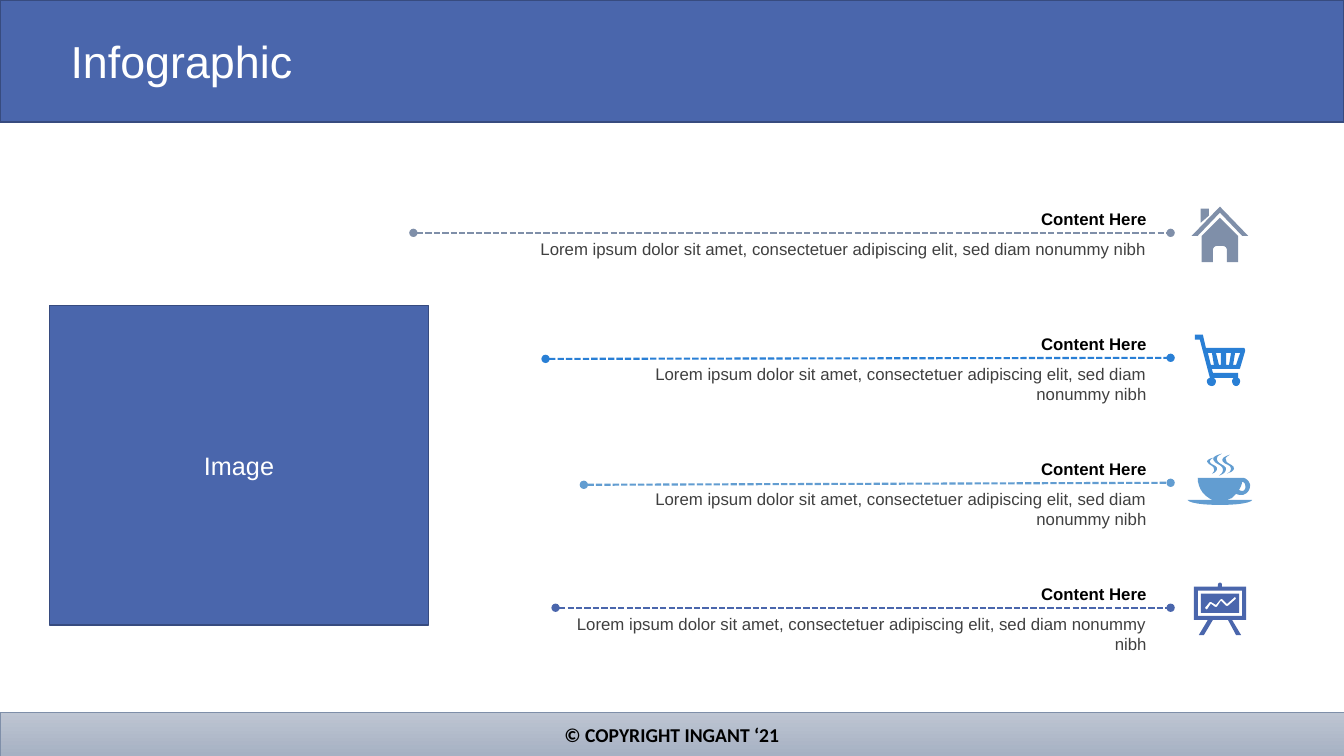
from lxml import etree
from pptx import Presentation
from pptx import util as u
from pptx.dml.color import RGBColor
from pptx.enum import dml, shapes, text
from pptx.oxml import ns

WIDTH, HEIGHT = u.Inches(13.33), u.Inches(7.5)
BLUE = RGBColor(0x4A, 0x66, 0xAC)
NAVY = RGBColor(0x37, 0x4B, 0x7F)
SLATE = RGBColor(0x7F, 0x8F, 0xA9)
AZURE = RGBColor(0x29, 0x7F, 0xD5)
SKY = RGBColor(0x62, 0x9D, 0xD1)
PALE = RGBColor(0xBE, 0xC5, 0xD2)
MIST = RGBColor(0xA6, 0xB1, 0xC3)
WHITE = RGBColor(0xFF, 0xFF, 0xFF)
BLACK = RGBColor(0, 0, 0)
GREY = RGBColor(0x40, 0x40, 0x40)

FIRST_RULE, ROW_STEP = 30.8, 16.53
TEXT_RIGHT, RULE_RIGHT = 86.05, 87.1
BOX_HEIGHT = 6.67
LOREM = "Lorem ipsum dolor sit amet, consectetuer adipiscing elit, sed diam nonummy nibh"

# Icon units are hundredths of an inch; six numbers make a Bézier curve.
HOUSE = [
    [(28, 11), (46, 29), (46, 55), (35, 55), (35, 43), (35, 41, 33, 39, 31, 39),
     (25, 39), (23, 39, 21, 41, 21, 43), (21, 55), (10, 55), (10, 29)],
    [(9, 2), (17, 2), (17, 9), (9, 16)],
    [(28, 0), (56, 29), (50, 29), (28, 6), (6, 29), (0, 29)],
]
CART = [
    [(40, 18), (38, 30), (41, 30), (45, 18)],
    [(31, 18), (31, 30), (34, 30), (36, 18)],
    [(21, 18), (24, 30), (26, 30), (26, 18)],
    [(13, 18), (16, 30), (19, 30), (17, 18)],
    [(8, 0), (11, 13), (48, 13), (49, 13, 50, 14, 50, 16), (45, 33),
     (45, 34, 44, 34, 43, 34), (17, 34), (18, 38), (43, 38), (43, 43),
     (44, 43, 45, 45, 45, 46), (45, 49, 43, 51, 41, 51), (39, 51, 37, 49, 37, 46),
     (37, 45, 38, 43, 39, 43), (19, 43), (20, 44, 21, 45, 21, 46),
     (21, 49, 19, 51, 17, 51), (14, 51, 12, 49, 12, 46), (12, 45, 13, 43, 15, 43),
     (5, 5), (0, 5), (0, 0)],
]
CUP = [
    [(54, 28), (54, 31, 52, 34, 51, 36), (52, 37, 54, 37, 55, 37),
     (57, 36, 58, 34, 57, 31), (57, 30, 56, 28, 54, 28)],
    [(54, 24), (58, 24, 61, 27, 62, 31), (62, 35, 60, 39, 57, 40),
     (54, 42, 51, 41, 48, 40), (47, 41, 45, 43, 44, 44), (42, 45, 41, 45, 39, 46),
     (64, 46), (63, 49, 49, 51, 32, 51), (15, 51, 1, 49, 0, 46), (25, 46),
     (23, 45, 22, 45, 21, 44), (14, 40, 10, 32, 10, 24)],
    [(26, 4), (24, 5, 22, 6, 22, 8), (23, 12, 30, 11, 29, 16), (28, 18, 27, 19, 24, 20),
     (26, 18, 27, 17, 26, 15), (26, 12, 22, 12, 20, 9), (18, 7, 21, 5, 26, 4)],
    [(42, 1), (39, 3, 37, 4, 38, 6), (38, 11, 46, 10, 46, 15), (45, 18, 43, 18, 39, 20),
     (42, 18, 43, 17, 43, 15), (43, 11, 37, 11, 35, 8), (33, 5, 36, 3, 42, 1)],
    [(34, 0), (31, 2, 29, 2, 29, 6), (30, 11, 39, 11, 38, 16), (37, 19, 36, 20, 31, 22),
     (34, 20, 35, 18, 35, 16), (35, 11, 28, 11, 26, 7), (24, 4, 27, 2, 34, 0)],
]
BOARD = [
    [(41, 14), (33, 21), (28, 16), (27, 16), (22, 22), (17, 19), (16, 19), (11, 25),
     (13, 27), (17, 21), (21, 24), (23, 24), (27, 18), (32, 23), (34, 23), (42, 16)],
    [(7, 11), (45, 11), (45, 30), (7, 30)],
    [(4, 8), (4, 33), (48, 33), (48, 8)],
    [(26, 0), (27, 0, 28, 1, 28, 2), (28, 4), (52, 4), (52, 37), (38, 37), (47, 52),
     (42, 52), (34, 37), (19, 37), (10, 52), (5, 52), (14, 37), (0, 37), (0, 4),
     (24, 4), (24, 2), (24, 1, 25, 0, 26, 0)],
]


def across(percent):
    return round(WIDTH * percent / 100)


def down(percent):
    return round(HEIGHT * percent / 100)


def area(left, top, width, height):
    return across(left), down(top), across(width), down(height)


def write(box, words, size, color, align, font="Arial", bold=False):
    frame = box.text_frame
    frame.word_wrap = True
    para = frame.paragraphs[0]
    para.text = words
    para.alignment = align
    para.font.name, para.font.size = font, u.Pt(size)
    para.font.bold, para.font.color.rgb = bold, color
    return para


def add_panel(page, place, line, weight):
    panel = page.shapes.add_shape(shapes.MSO_SHAPE.RECTANGLE, *place)
    panel.shadow.inherit = False
    panel.fill.solid()
    panel.fill.fore_color.rgb = BLUE
    panel.line.color.rgb = line
    panel.line.width = u.Pt(weight)
    panel.text_frame.vertical_anchor = text.MSO_ANCHOR.MIDDLE
    return panel


def add_title(page, words):
    title = page.shapes.title
    title.left, title.top, title.width, title.height = area(4.5, 3.2, 93.1, 10.53)
    title.text_frame.auto_size = text.MSO_AUTO_SIZE.NONE
    title.text_frame.vertical_anchor = text.MSO_ANCHOR.MIDDLE
    para = write(title, words, 32, WHITE, text.PP_ALIGN.LEFT)
    para.line_spacing = 0.9
    page.shapes._spTree.append(title._element)


def add_footer(page, words):
    footer = add_panel(page, area(0, 94.27, 100, 5.73), SLATE, 0.5)
    footer.fill.gradient()
    footer.fill.gradient_angle = 270
    for stop, color in zip(footer.fill.gradient_stops, (PALE, MIST)):
        stop.color.rgb = color
    write(footer, words, 14, BLACK, text.PP_ALIGN.CENTER, "Calibri", True)


def add_label(group, left, top, height, words, color, bold=False):
    box = group.shapes.add_textbox(*area(left, top, TEXT_RIGHT - left, height))
    write(box, words, 12, color, text.PP_ALIGN.RIGHT, bold=bold)
    box.text_frame.auto_size = text.MSO_AUTO_SIZE.SHAPE_TO_FIT_TEXT


def add_rule(group, left, start, end, color):
    rule = group.shapes.add_connector(
        shapes.MSO_CONNECTOR.STRAIGHT, across(left), down(start), across(RULE_RIGHT), down(end))
    rule.line.color.rgb = color
    rule.line.width = u.Pt(1.5)
    rule.line.dash_style = dml.MSO_LINE.SQUARE_DOT
    for tag in ("a:headEnd", "a:tailEnd"):
        etree.SubElement(rule.line._get_or_add_ln(), ns.qn(tag), type="oval")
    etree.SubElement(rule._element.spPr, ns.qn("a:effectLst"))


def trace(contour, steps=6):
    points = []
    for node in contour:
        if len(node) == 2:
            points.append((node[0] * 10, node[1] * 10))
            continue
        x, y = points[-1]
        bends = [(x, y)] + [(node[i] * 10, node[i + 1] * 10) for i in (0, 2, 4)]
        for step in range(1, steps + 1):
            t = step / steps
            weights = (1 - t) ** 3, 3 * t * (1 - t) ** 2, 3 * t * t * (1 - t), t ** 3
            points.append(tuple(sum(w * bend[axis] for w, bend in zip(weights, bends))
                                for axis in (0, 1)))
    return points


def add_icon(page, left, top, contours, color):
    outlines = [trace(contour) for contour in contours]
    builder = page.shapes.build_freeform(*outlines[0][0], scale=u.Inches(1) / 1000)
    for number, outline in enumerate(outlines):
        if number:
            builder.move_to(*outline[0])
        builder.add_line_segments(outline[1:], close=True)
    icon = builder.convert_to_shape(across(left), down(top))
    icon.shadow.inherit = False
    icon.fill.solid()
    icon.fill.fore_color.rgb = color
    icon.line.fill.background()


def main():
    deck = Presentation()
    deck.slide_width, deck.slide_height = WIDTH, HEIGHT
    page = deck.slides.add_slide(deck.slide_layouts[5])
    add_panel(page, area(0, 0, 100, 16.13), NAVY, 1)
    add_footer(page, "© COPYRIGHT INGANT ‘21")
    add_title(page, "Infographic")
    rows = [
        (SLATE, 31.88, 31.88, 4, 30.76, 0, HOUSE, 88.67, 27.33),
        (AZURE, 44.34, 44.34, BOX_HEIGHT, 40.59, 0.14, CART, 88.9, 44.27),
        (SKY, 42.76, 42.91, BOX_HEIGHT, 43.44, 0.27, CUP, 88.37, 60),
        (BLUE, 54.39, 40.59, BOX_HEIGHT, 41.34, 0, BOARD, 88.82, 77.07),
    ]
    for number, row in enumerate(rows):
        color, heading, body, height, start, drop, icon, icon_left, icon_top = row
        level = FIRST_RULE + number * ROW_STEP
        group = page.shapes.add_group_shape()
        add_label(group, body, level + 0.13, height, LOREM, GREY)
        add_label(group, heading, level - 3.87, BOX_HEIGHT, "Content Here", BLACK, True)
        add_rule(group, start, level + drop, level, color)
        add_icon(page, icon_left, icon_top, icon, color)
    picture = add_panel(page, area(3.68, 40.4, 28.21, 42.27), NAVY, 1)
    write(picture, "Image", 18, WHITE, text.PP_ALIGN.CENTER)
    deck.save("out.pptx")


if __name__ == "__main__":
    main()
